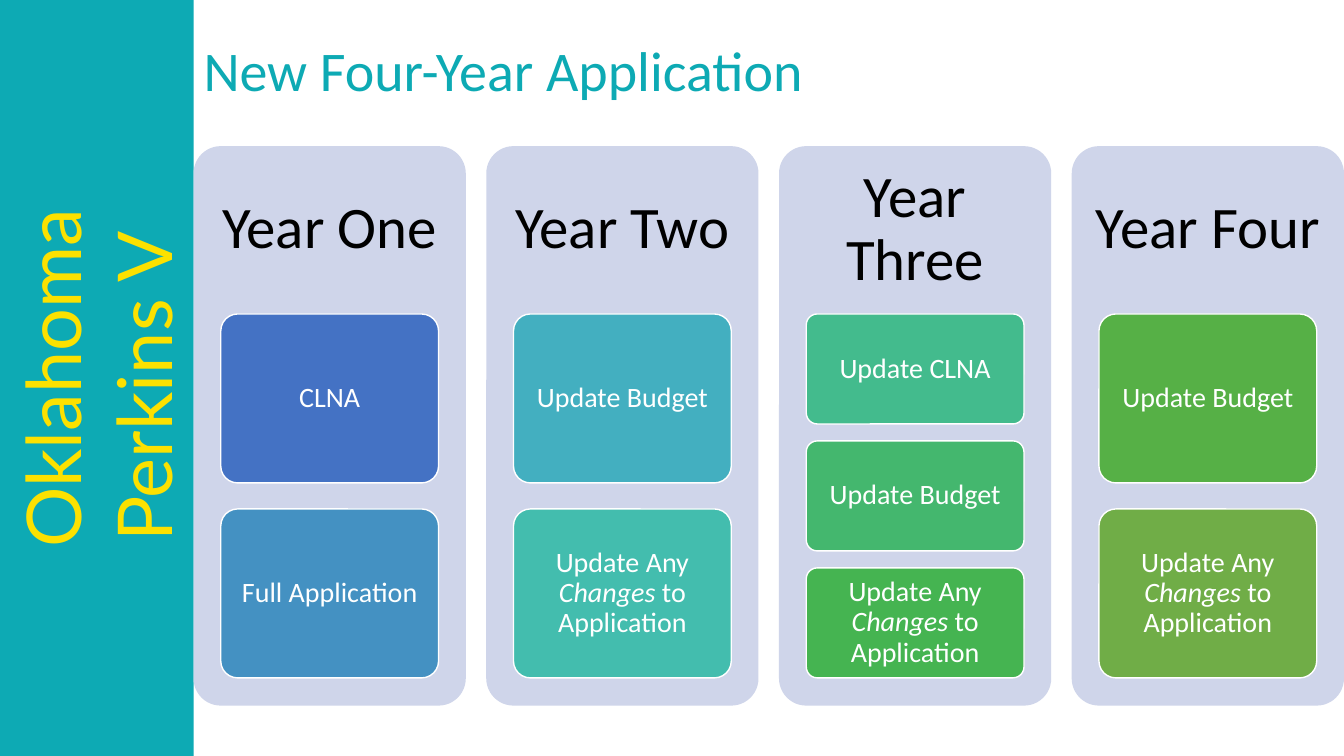
"""Build the slide on the four-year application cycle."""
from pptx import Presentation
from pptx import util as u
from pptx.dml.color import RGBColor
from pptx.enum import shapes, text

SIDEBAR = ["Oklahoma", "Perkins V "]
TITLE = "New Four-Year Application"
CHANGES = [("Update Any ", False), ("Changes", True), (" to Application", False)]
YEARS = [
    ("Year One", [("CLNA", "4472C4"), ("Full Application", "4491C2")]),
    ("Year Two", [("Update Budget", "43AFC0"), (CHANGES, "43BDAE")]),
    ("Year Three", [("Update CLNA", "43BB8D"), ("Update Budget", "44B76E"),
                    (CHANGES, "45B451")]),
    ("Year Four", [("Update Budget", "56B046"), (CHANGES, "70AD47")]),
]
TEAL, YELLOW, PANEL, WHITE, BLACK = "0DAAB4", "FCE100", "CFD5EA", "FFFFFF", "000000"

WIDTH, HEIGHT = 13.33, 7.5
SIDEBAR_WIDTH = 1.92
PANEL_TOP, PANEL_WIDTH, PANEL_HEIGHT = 1.45, 2.7, 5.55
PANEL_STEP = (WIDTH - SIDEBAR_WIDTH - PANEL_WIDTH) / (len(YEARS) - 1)
HEADING_HEIGHT = 1.66
CARD_INDENT, CARD_WIDTH = 0.27, 2.16
CARDS_TOP, CARDS_HEIGHT = 3.115, 3.61
GAP_RATIO = 0.154


def color(value):
    return RGBColor.from_string(value)


def add_box(slide, box, fill, kind=shapes.MSO_SHAPE.ROUNDED_RECTANGLE, line=None):
    shape = slide.shapes.add_shape(kind, *map(u.Inches, box))
    shape.shadow.inherit = False
    shape.fill.solid()
    shape.fill.fore_color.rgb = color(fill)
    if line:
        shape.line.color.rgb = color(line)
        shape.line.width = u.Pt(1)
    else:
        shape.line.fill.background()
    if kind == shapes.MSO_SHAPE.ROUNDED_RECTANGLE:
        shape.adjustments[0] = 0.1
    return shape


def write(shape, paragraphs, size, ink, font="Calibri", spacing=0.9,
          align=text.PP_ALIGN.CENTER, insets=(0.1, 0.05)):
    frame = shape.text_frame
    frame.word_wrap = True
    frame.vertical_anchor = text.MSO_ANCHOR.MIDDLE
    frame.margin_left = frame.margin_right = u.Inches(insets[0])
    frame.margin_top = frame.margin_bottom = u.Inches(insets[1])
    for index, content in enumerate(paragraphs):
        paragraph = frame.add_paragraph() if index else frame.paragraphs[0]
        paragraph.alignment = align
        paragraph.line_spacing = spacing
        runs = [(content, False)] if isinstance(content, str) else content
        for words, italic in runs:
            run = paragraph.add_run()
            run.text = words
            run.font.name = font
            run.font.size = u.Pt(size)
            run.font.italic = italic
            run.font.color.rgb = color(ink)


def add_label(slide, box, words, size, ink, **style):
    write(slide.shapes.add_textbox(*map(u.Inches, box)), [words], size, ink, **style)


def add_year(slide, left, heading, cards):
    add_box(slide, (left, PANEL_TOP, PANEL_WIDTH, PANEL_HEIGHT), PANEL)
    add_label(slide, (left, PANEL_TOP, PANEL_WIDTH, HEADING_HEIGHT), heading,
              42, BLACK, insets=(0.17, 0.17))
    count = len(cards)
    height = CARDS_HEIGHT / (count + GAP_RATIO * (count - 1))
    for row, (words, fill) in enumerate(cards):
        top = CARDS_TOP + row * height * (1 + GAP_RATIO)
        card = add_box(slide, (left + CARD_INDENT, top, CARD_WIDTH, height),
                       fill, line=WHITE)
        write(card, [words], 20, WHITE, insets=(0.06, 0.04))


def main():
    presentation = Presentation()
    presentation.slide_width = u.Inches(WIDTH)
    presentation.slide_height = u.Inches(HEIGHT)
    slide = presentation.slides.add_slide(presentation.slide_layouts[6])

    offset = (HEIGHT - SIDEBAR_WIDTH) / 2
    sidebar = add_box(slide, (-offset, offset, HEIGHT, SIDEBAR_WIDTH), TEAL,
                      kind=shapes.MSO_SHAPE.RECTANGLE)
    sidebar.rotation = 270
    write(sidebar, SIDEBAR, 54, YELLOW, font="Lato", spacing=1.0)

    add_label(slide, (SIDEBAR_WIDTH, 0, WIDTH - SIDEBAR_WIDTH, PANEL_TOP), TITLE,
              40, TEAL, align=text.PP_ALIGN.LEFT)
    for column, (heading, cards) in enumerate(YEARS):
        add_year(slide, SIDEBAR_WIDTH + column * PANEL_STEP, heading, cards)
    presentation.save("out.pptx")


if __name__ == "__main__":
    main()
